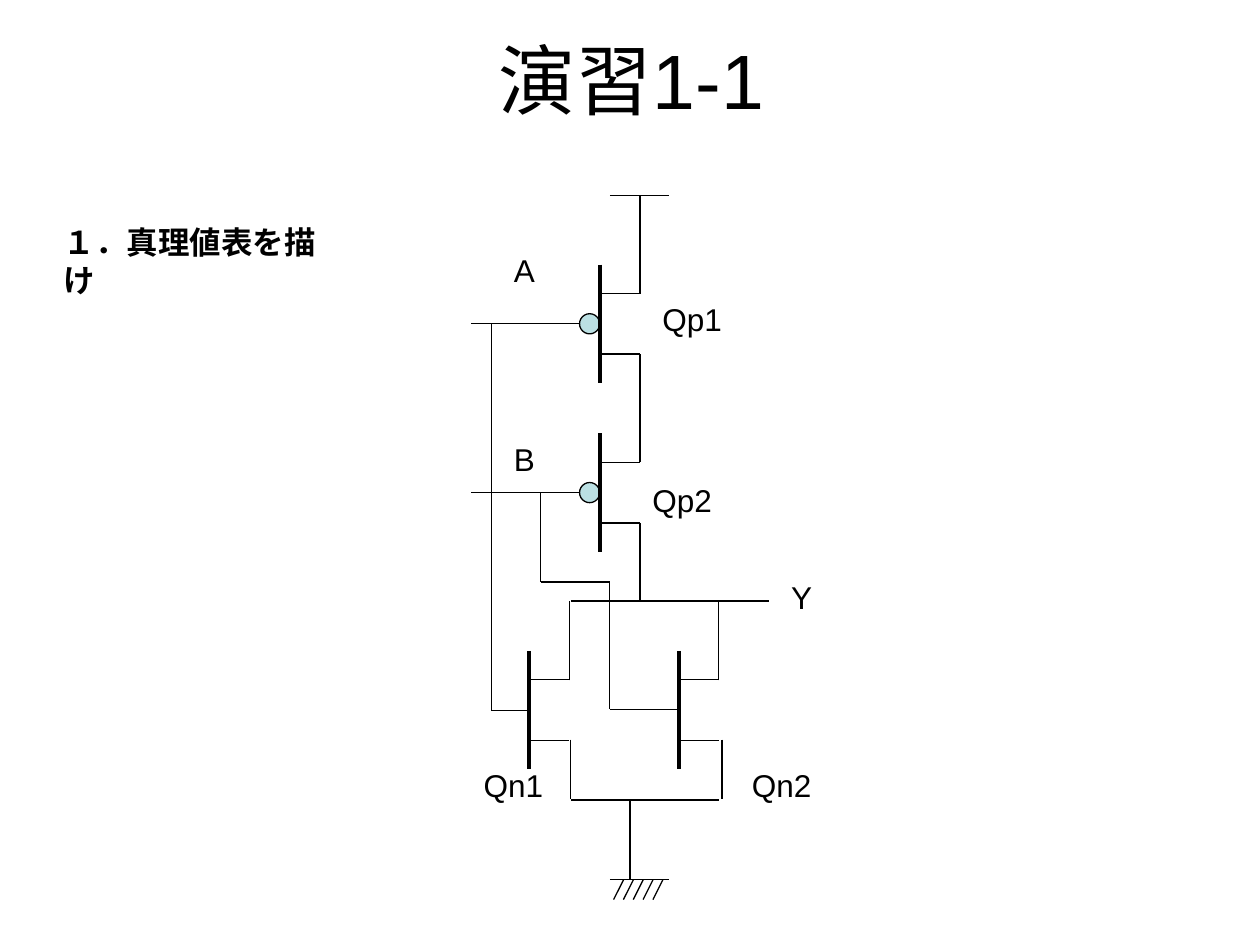
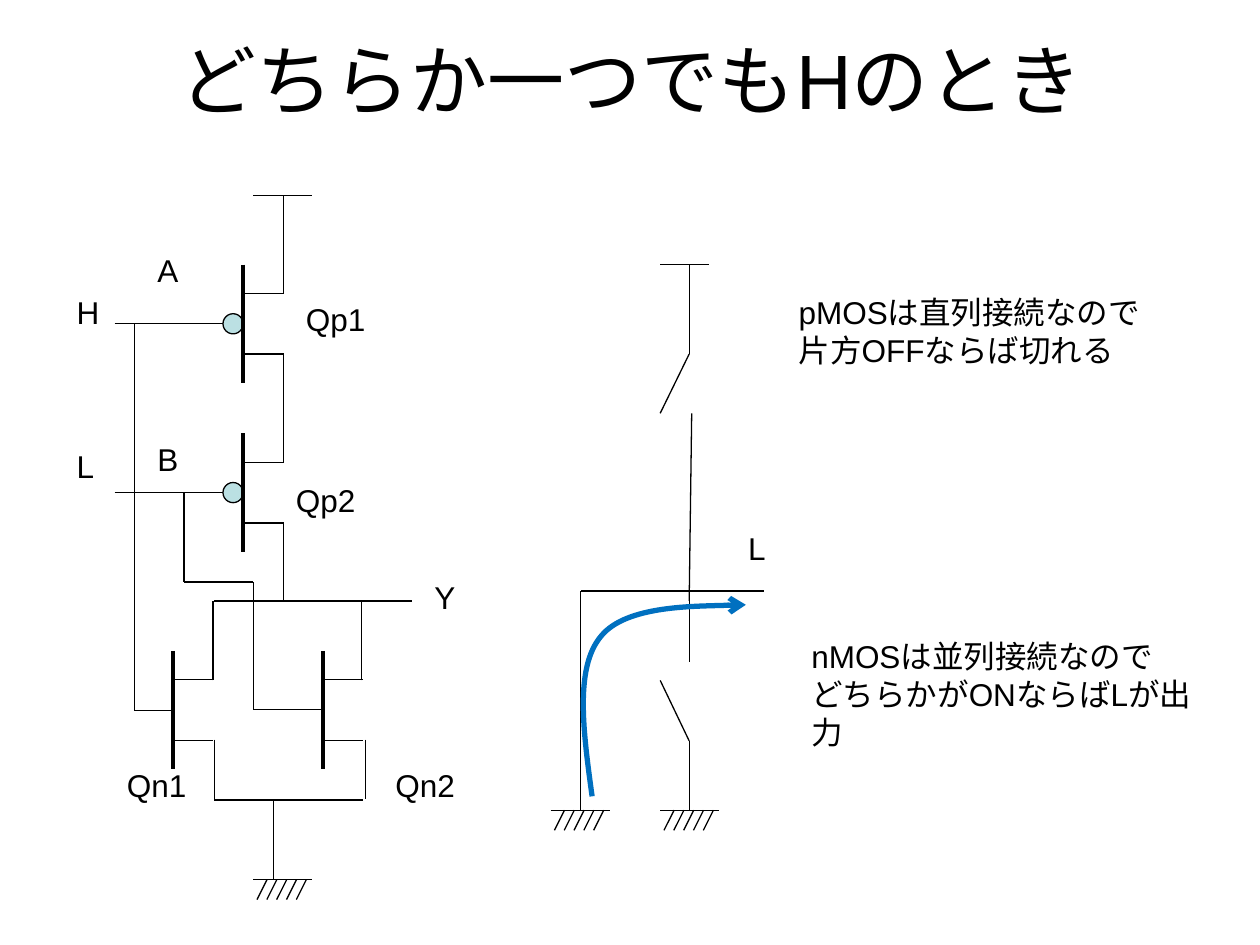
from dataclasses import dataclass
from itertools import pairwise

from lxml import etree
from pptx import Presentation
from pptx.dml.color import RGBColor
from pptx.enum.shapes import MSO_CONNECTOR, MSO_SHAPE
from pptx.enum.text import MSO_ANCHOR, PP_ALIGN
from pptx.oxml.ns import qn
from pptx.util import Inches, Pt

STRAIGHT = MSO_CONNECTOR.STRAIGHT
OVAL = MSO_SHAPE.OVAL
MIDDLE, TOP = MSO_ANCHOR.MIDDLE, MSO_ANCHOR.TOP
CENTER, LEFT = PP_ALIGN.CENTER, PP_ALIGN.LEFT


@dataclass(frozen=True)
class Theme:
    font: str = "Arial"
    ink: RGBColor = RGBColor(0x00, 0x00, 0x00)
    bubble: RGBColor = RGBColor(0xBB, 0xE0, 0xE3)
    current: RGBColor = RGBColor(0x00, 0x70, 0xC0)
    title_size: float = 44
    body_size: float = 18
    wire: float = 0.75
    channel: float = 2.25
    flow: float = 3


THEME = Theme()

# NOR gate: x runs from the left end of the inputs, y from the slide top
TRANSISTORS = [  # channel x, gate y, is pMOS
    (1.02, 2.57, True),
    (1.02, 3.91, True),
    (0.46, 5.635, False),
    (1.65, 5.635, False),
]
GATE_WIRES = [
    [(1.10, 1.55), (1.57, 1.55)],  # supply rail
    [(1.34, 1.55), (1.34, 2.33)],  # supply to Qp1
    [(1.34, 2.81), (1.34, 3.67)],  # Qp1 to Qp2
    [(1.34, 4.15), (1.34, 4.77)],  # Qp2 to output
    [(0.79, 4.77), (1.97, 4.77), (2.36, 4.77)],  # output Y
    [(0.78, 5.40), (0.78, 4.77)],  # Qn1 drain
    [(1.96, 5.40), (1.96, 4.77)],  # Qn2 drain
    [(0.79, 5.87), (0.79, 6.34)],  # Qn1 source
    [(1.99, 5.87), (1.99, 6.34)],  # Qn2 source
    [(0.79, 6.35), (1.97, 6.35)],  # joined sources
    [(1.26, 6.35), (1.26, 6.98)],  # sources to ground
    [(0, 2.57), (0.87, 2.57)],  # input A
    [(0.16, 2.57), (0.16, 5.64), (0.47, 5.64)],  # A to Qn1
    [(0, 3.91), (1.02, 3.91)],  # input B
    [(0.55, 3.91), (0.55, 4.62), (1.10, 4.62), (1.10, 5.63), (1.65, 5.63)],
]
GATE_GROUND = (1.10, 6.98)
GATE_LABELS = [
    ("A", 0.24, 1.94), ("B", 0.24, 3.44), ("Y", 2.44, 4.54),
    ("Qp1", 1.42, 2.33), ("Qp2", 1.34, 3.77),
    ("Qn1", 0, 6.03), ("Qn2", 2.13, 6.03),
]

# Switch model: both pMOS above the output, both nMOS below it
SWITCH_WIRES = [
    [(5.24, 2.10), (5.63, 2.10)],  # supply rail
    [(5.47, 2.10), (5.47, 2.81), (5.24, 3.28)],  # open pMOS switch
    [(5.49, 3.28), (5.47, 4.77)],
    [(6.06, 4.69), (4.61, 4.69), (4.61, 6.43)],  # closed nMOS switch
    [(5.47, 4.69), (5.47, 5.25)],
    [(5.47, 6.43), (5.47, 5.88), (5.24, 5.40)],  # open nMOS switch
]
SWITCH_GROUNDS = [(4.37, 6.43), (5.24, 6.43)]
CURRENT_CURVE = [
    (4.70, 6.32),
    (4.63, 5.81), (4.56, 5.30), (4.77, 5.05),
    (4.97, 4.80), (5.92, 4.80), (5.92, 4.80),
]

SLIDES = [
    {
        "title": "演習1-1",
        "gate_x": 3.74,
        "levels": [],
        "notes": [(["１．真理値表を描け"], 0.41, 1.72, 2.27, 0.4, True)],
        "switches": False,
    },
    {
        "title": "どちらか一つでもHのとき",
        "gate_x": 0.91,
        "levels": [("H", 0.51, 2.28), ("L", 0.51, 3.50), ("L", 5.84, 4.15)],
        "notes": [
            (["pMOSは直列接続なので", "片方OFFならば切れる"],
             6.24, 2.28, 3, 0.71, False),
            (["nMOSは並列接続なので", "どちらかがONならばLが出力"],
             6.34, 5.01, 3.31, 0.71, False),
        ],
        "switches": True,
    },
]


def add_text(slide, lines, x, y, width, height, size=THEME.body_size,
             bold=False, wrap=True, align=LEFT, anchor=TOP):
    box = slide.shapes.add_textbox(
        Inches(x), Inches(y), Inches(width), Inches(height))
    frame = box.text_frame
    frame.word_wrap = wrap
    frame.vertical_anchor = anchor
    for i, line in enumerate(lines):
        paragraph = frame.add_paragraph() if i else frame.paragraphs[0]
        paragraph.alignment = align
        run = paragraph.add_run()
        run.text = line
        run.font.name = THEME.font
        run.font.size = Pt(size)
        run.font.bold = bold
        run.font.color.rgb = THEME.ink


def add_label(slide, label, x, y):
    width = 0.67 if len(label) > 1 else 0.37
    add_text(slide, [label], x, y, width, 0.4, wrap=False)


def add_wire(slide, points, weight=THEME.wire):
    for start, end in pairwise(points):
        wire = slide.shapes.add_connector(
            STRAIGHT, *(Inches(v) for v in (*start, *end)))
        wire.line.color.rgb = THEME.ink
        wire.line.width = Pt(weight)
        etree.SubElement(wire._element.spPr, qn("a:effectLst"))


def add_ground(slide, x, y):
    add_wire(slide, [(x, y), (x + 0.47, y)])
    for i in range(5):
        top = x + 0.11 + i * 0.078
        add_wire(slide, [(top, y), (top - 0.08, y + 0.16)])


def add_transistor(slide, x, y, is_pmos):
    if is_pmos:
        size = 0.16
        bubble = slide.shapes.add_shape(
            OVAL, Inches(x - size), Inches(y - size / 2),
            Inches(size), Inches(size))
        bubble.shadow.inherit = False
        bubble.fill.solid()
        bubble.fill.fore_color.rgb = THEME.bubble
        bubble.line.color.rgb = THEME.ink
        bubble.line.width = Pt(THEME.wire)
    add_wire(slide, [(x, y - 0.47), (x, y + 0.47)], THEME.channel)
    for terminal in (y - 0.24, y + 0.24):
        add_wire(slide, [(x, terminal), (x + 0.32, terminal)])


def add_gate(slide, left):
    for points in GATE_WIRES:
        add_wire(slide, [(left + x, y) for x, y in points])
    for x, y, is_pmos in TRANSISTORS:
        add_transistor(slide, left + x, y, is_pmos)
    add_ground(slide, left + GATE_GROUND[0], GATE_GROUND[1])
    for label, x, y in GATE_LABELS:
        add_label(slide, label, left + x, y)


def add_current(slide):
    points = [(Inches(x), Inches(y)) for x, y in CURRENT_CURVE]
    builder = slide.shapes.build_freeform(*points[0])
    builder.add_line_segments(points[1:], close=False)
    current = builder.convert_to_shape()
    current.shadow.inherit = False
    current.fill.background()
    current.line.color.rgb = THEME.current
    current.line.width = Pt(THEME.flow)
    # Every three segments become one cubic curve
    segments = list(current._element.iter(qn("a:lnTo")))
    outline = segments[0].getparent()
    for i in range(0, len(segments), 3):
        curve = etree.SubElement(outline, qn("a:cubicBezTo"))
        for segment in segments[i:i + 3]:
            curve.append(segment[0])
            outline.remove(segment)
    etree.SubElement(current.line._get_or_add_ln(), qn("a:tailEnd"),
                     type="arrow")


def add_switches(slide):
    for points in SWITCH_WIRES:
        add_wire(slide, points)
    for x, y in SWITCH_GROUNDS:
        add_ground(slide, x, y)
    add_current(slide)


def main():
    deck = Presentation()
    deck.slide_width, deck.slide_height = Inches(10), Inches(7.5)
    for content in SLIDES:
        slide = deck.slides.add_slide(deck.slide_layouts[6])
        add_text(slide, [content["title"]], 0.51, 0, 9, 1.25,
                 size=THEME.title_size, align=CENTER, anchor=MIDDLE)
        add_gate(slide, content["gate_x"])
        for label, x, y in content["levels"]:
            add_label(slide, label, x, y)
        for lines, x, y, width, height, bold in content["notes"]:
            add_text(slide, lines, x, y, width, height, bold=bold)
        if content["switches"]:
            add_switches(slide)
    deck.save("out.pptx")


if __name__ == "__main__":
    main()
